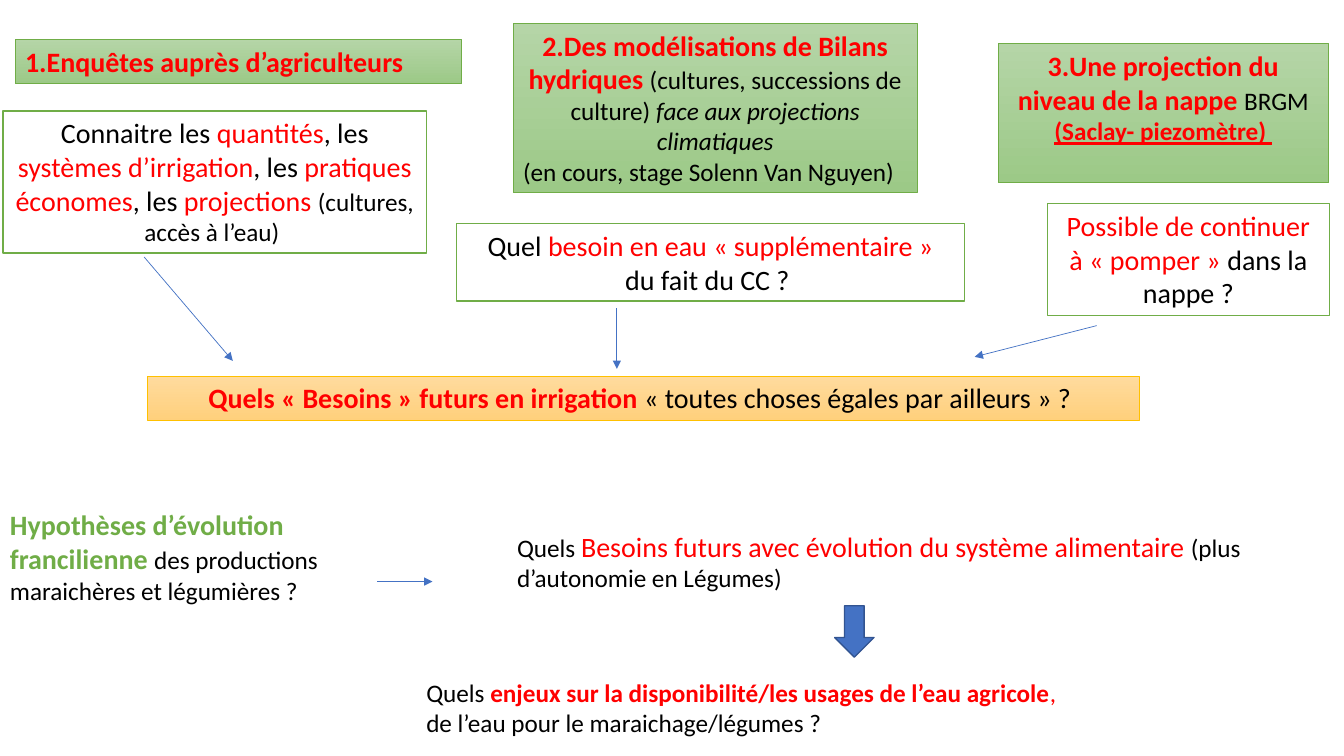
from dataclasses import dataclass

from lxml.etree import SubElement
from pptx import Presentation
from pptx.dml.color import RGBColor
from pptx.enum.shapes import MSO_CONNECTOR, MSO_SHAPE
from pptx.enum.text import MSO_ANCHOR, PP_ALIGN
from pptx.oxml.ns import qn
from pptx.util import Pt


@dataclass(frozen=True)
class Theme:
    font: str = "Calibri"
    large: int = 20
    normal: int = 18
    black: str = "000000"
    red: str = "FF0000"
    green: str = "70AD47"
    gold: str = "FFC000"
    white: str = "FFFFFF"
    blue: str = "4472C4"
    dark_blue: str = "325491"
    green_fill: tuple = ("B5D5A7", "9CC987")
    gold_fill: tuple = ("FFDB9E", "FFD07C")


@dataclass(frozen=True)
class Box:
    left: float
    top: float
    width: float
    height: float

    def inner(self, left, top, width, height):
        """Return a box whose corner is measured from this box's corner."""
        return Box(self.left + left, self.top + top, width, height)

    def lengths(self):
        return [Pt(value) for value in (self.left, self.top, self.width, self.height)]


@dataclass(frozen=True)
class Style:
    size: int
    color: str
    bold: bool = False
    italic: bool = False
    underline: bool = False


THEME = Theme()
PLAIN = Style(THEME.large, THEME.black)
KEY = Style(THEME.large, THEME.red)
STRONG = Style(THEME.large, THEME.red, bold=True)
SCENARIO = Style(THEME.large, THEME.green, bold=True)
DETAIL = Style(THEME.normal, THEME.black)
ITALIC = Style(THEME.normal, THEME.black, italic=True)
DETAIL_KEY = Style(THEME.normal, THEME.red)
DETAIL_STRONG = Style(THEME.normal, THEME.red, bold=True)
SITE = Style(THEME.normal, THEME.red, bold=True, underline=True)
CENTER, LEFT = PP_ALIGN.CENTER, PP_ALIGN.LEFT


def write(shape, paragraphs):
    """Fill a shape with (alignment, (text, style), ...) paragraphs."""
    frame = shape.text_frame
    frame.word_wrap = True
    frame.vertical_anchor = MSO_ANCHOR.TOP
    for index, (alignment, *spans) in enumerate(paragraphs):
        para = frame.add_paragraph() if index else frame.paragraphs[0]
        para.alignment = alignment
        for text, style in spans:
            span = para.add_run()
            span.text = text
            font = span.font
            font.name, font.size = THEME.font, Pt(style.size)
            font.bold, font.italic, font.underline = style.bold, style.italic, style.underline
            font.color.rgb = RGBColor.from_string(style.color)


def add_text(slide, box, paragraphs):
    write(slide.shapes.add_textbox(*box.lengths()), paragraphs)


def add_panel(slide, box, fill, line, line_width, paragraphs=(), kind=MSO_SHAPE.RECTANGLE):
    """Add a shape; fill is one colour or a (top, bottom) pair."""
    panel = slide.shapes.add_shape(kind, *box.lengths())
    panel.shadow.inherit = False
    if isinstance(fill, tuple):
        panel.fill.gradient()
        panel.fill.gradient_angle = 270
        for stop, color in zip(panel.fill.gradient_stops, fill):
            stop.color.rgb = RGBColor.from_string(color)
    else:
        panel.fill.solid()
        panel.fill.fore_color.rgb = RGBColor.from_string(fill)
    panel.line.color.rgb = RGBColor.from_string(line)
    panel.line.width = Pt(line_width)
    write(panel, paragraphs)


def add_arrow(slide, start, end):
    points = [Pt(value) for value in (*start, *end)]
    arrow = slide.shapes.add_connector(MSO_CONNECTOR.STRAIGHT, *points)
    arrow.line.color.rgb = RGBColor.from_string(THEME.blue)
    arrow.line.width = Pt(0.5)
    properties = arrow._element.spPr
    SubElement(properties.find(qn("a:ln")), qn("a:tailEnd"), type="triangle")
    SubElement(properties, qn("a:effectLst"))


def add_study(slide, heading_box, question_box, heading, question):
    """Add a green study heading with its question; question_box is relative to it."""
    add_panel(slide, heading_box, THEME.green_fill, THEME.green, 0.5, heading)
    add_panel(slide, heading_box.inner(*question_box), THEME.white, THEME.green, 1, question)


def add_studies(slide, box):
    add_study(
        slide, box.inner(10.8, 28.1, 319, 31.7), (-8.6, 51.1, 302.4, 101.5),
        [(LEFT, ("1.Enquêtes auprès d’agriculteurs", STRONG))],
        [(CENTER, ("Connaitre les ", PLAIN), ("quantités", KEY), (", les ", PLAIN),
          ("systèmes d’irrigation", KEY), (", les ", PLAIN), ("pratiques économes", KEY),
          (", les ", PLAIN), ("projections ", KEY), ("(cultures, accès à l’eau) ", DETAIL))])
    add_study(
        slide, box.inner(366.5, 16.6, 288.7, 121), (-40.3, 143.2, 362.9, 55.4),
        [(CENTER, ("2.Des modélisations de Bilans hydriques ", STRONG),
          ("(cultures, successions de culture) ", DETAIL),
          ("face aux projections climatiques", ITALIC)),
         (LEFT, ("(en cours, stage Solenn Van Nguyen)", DETAIL))],
        [(CENTER, ("Quel ", PLAIN), ("besoin en eau « supplémentaire »", KEY)),
         (CENTER, ("du fait du CC ? ", PLAIN))])
    add_study(
        slide, box.inner(712.8, 31, 236.2, 99.4), (35.3, 114.4, 201.6, 79.9),
        [(CENTER, ("3.Une projection du niveau de la nappe ", STRONG), ("BRGM", DETAIL)),
         (CENTER, ("(Saclay- piezomètre) ", SITE))],
        [(CENTER, ("Possible de continuer à « pomper » ", KEY), ("dans la nappe ?", PLAIN))])
    for start, end in (((103, 183.6), (166.3, 257.8)),
                       ((440.6, 220.3), (440.6, 263.5)),
                       ((783.4, 232.6), (696.2, 254.9))):
        add_arrow(slide, (box.left + start[0], box.top + start[1]),
                  (box.left + end[0], box.top + end[1]))


def add_irrigation_needs(slide, box):
    add_panel(slide, box, THEME.gold_fill, THEME.gold, 0.5, [
        (CENTER, ("Quels « Besoins » futurs en irrigation ", STRONG),
         ("« toutes choses égales par ailleurs » ? ", PLAIN))])


def add_food_system(slide, box):
    add_text(slide, box.inner(0, 0, 236.9, 77.8), [
        (LEFT, ("Hypothèses d’évolution francilienne ", SCENARIO),
         ("des productions maraichères et légumières ?", DETAIL))])
    arrow_top = box.top + 56.1
    add_arrow(slide, (box.left + 269.3, arrow_top), (box.left + 308.9, arrow_top))
    add_text(slide, box.inner(362.2, 15.1, 547.9, 53.3), [
        (LEFT, ("Quels ", DETAIL),
         ("Besoins futurs avec évolution du système alimentaire ", KEY),
         ("(plus d’autonomie en Légumes)", DETAIL))])
    add_panel(slide, box.inner(596.2, 73.4, 28.1, 36.7), THEME.blue, THEME.dark_blue, 1,
              kind=MSO_SHAPE.DOWN_ARROW)
    add_text(slide, box.inner(297.4, 120.9, 480.2, 51.1), [
        (LEFT, ("Quels ", DETAIL),
         ("enjeux sur la disponibilité/les usages de l’eau agricole", DETAIL_STRONG),
         (",", DETAIL_KEY), (" de l’eau pour le maraichage/légumes ?", DETAIL))])


def main():
    deck = Presentation()
    deck.slide_width, deck.slide_height = Pt(960), Pt(540)
    slide = deck.slides.add_slide(deck.slide_layouts[6])
    add_studies(slide, Box(0, 0, 960, 264))
    add_irrigation_needs(slide, Box(105.1, 268.6, 708.5, 31.7))
    add_food_system(slide, Box(0, 359.3, 960, 172))
    deck.save("out.pptx")


if __name__ == "__main__":
    main()
